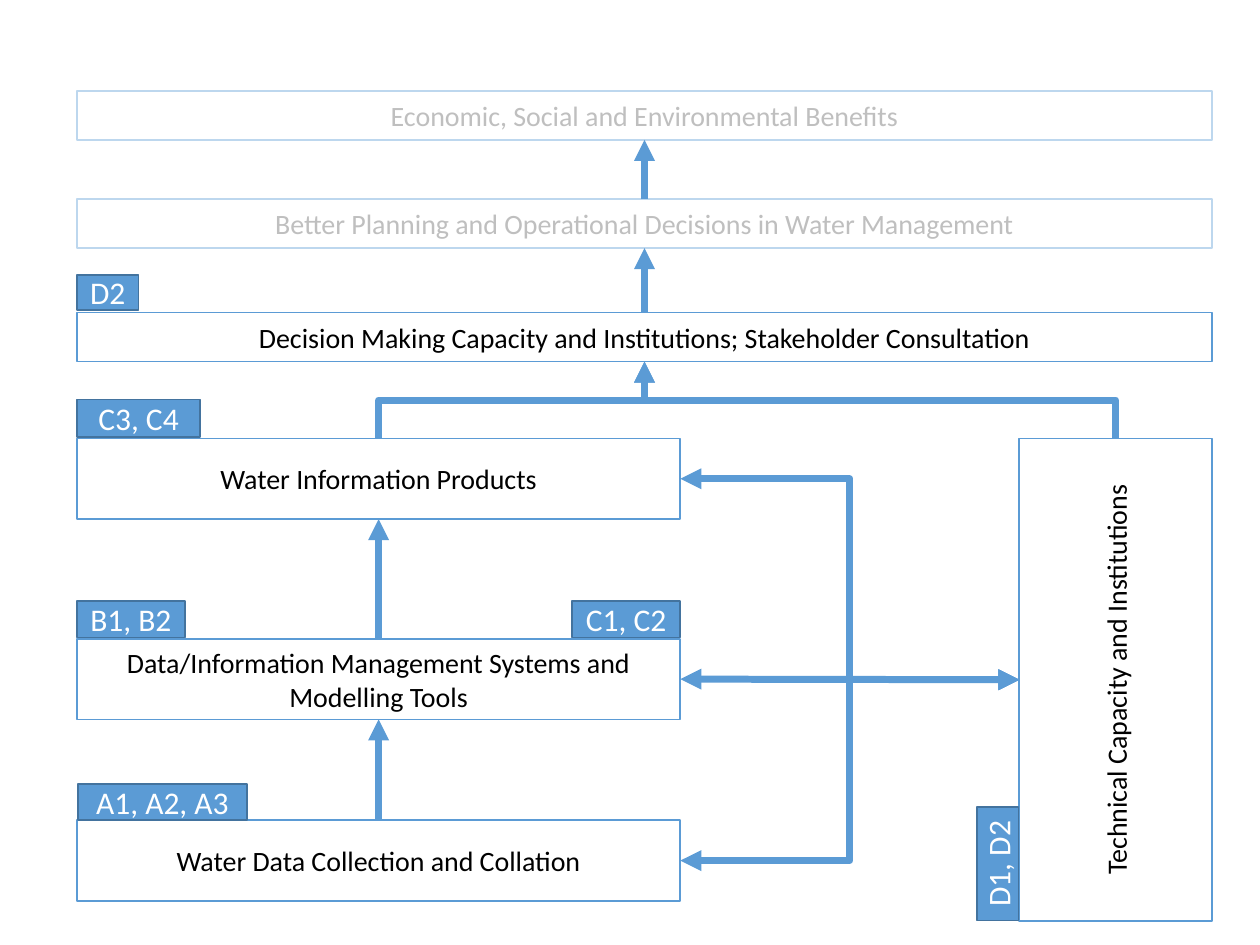
"""Build the water information value chain diagram slide."""
from lxml.etree import SubElement
from pptx import Presentation
from pptx.dml.color import RGBColor
from pptx.enum.shapes import MSO_CONNECTOR as Link, MSO_SHAPE as Shape
from pptx.enum.text import MSO_ANCHOR, PP_ALIGN
from pptx.oxml.ns import qn
from pptx.util import Inches, Pt

BLUE, PALE, EDGE = "5B9BD5", "BDD7EE", "43739E"
WHITE, BLACK, GREY = "FFFFFF", "000000", "BFBFBF"
LEFT, WIDE, NARROW = 0.61, 9.01, 4.79
BAR, BLOCK = 0.39, 0.64

STAGES = {
    "benefits": ("Economic, Social and Environmental Benefits",
                 (LEFT, 0.72, WIDE, BAR), PALE, GREY),
    "planning": ("Better Planning and Operational Decisions in Water Management",
                 (LEFT, 1.58, WIDE, BAR), PALE, GREY),
    "decisions": ("Decision Making Capacity and Institutions; Stakeholder Consultation",
                  (LEFT, 2.48, WIDE, BAR), BLUE, BLACK),
    "products": ("Water Information Products",
                 (LEFT, 3.48, NARROW, BLOCK), BLUE, BLACK),
    "systems": ("Data/Information Management Systems and Modelling Tools",
                (LEFT, 5.07, NARROW, BLOCK), BLUE, BLACK),
    "collection": ("Water Data Collection and Collation",
                   (LEFT, 6.51, NARROW, BLOCK), BLUE, BLACK),
    "capacity": ("Technical Capacity and Institutions",
                 (8.09, 3.48, 1.53, 3.83), BLUE, BLACK),
}
UPWARD = [("collection", "systems"), ("systems", "products"),
          ("products", "decisions"), ("decisions", "planning"),
          ("planning", "benefits"), ("capacity", "decisions")]
SUPPORTED = ["collection", "systems", "products"]
TAGS = [
    ("A1, A2, A3", (0.62, 6.22, 1.34, 0.29), 0),
    ("B1, B2", (LEFT, 4.77, 0.86, 0.29), 0),
    ("D1, D2", (7.47, 6.69, 0.9, 0.33), 270),
    ("C3, C4", (LEFT, 3.17, 0.98, 0.3), 0),
    ("C1, C2", (4.54, 4.77, 0.86, 0.29), 0),
    ("D2", (LEFT, 2.18, 0.49, 0.28), 0),
]


def rgb(value):
    """Turn a hex string into a colour."""
    return RGBColor.from_string(value)


def add_box(slide, text, place, fill, line, ink, size):
    """Draw a rectangle with centred text."""
    box = slide.shapes.add_shape(Shape.RECTANGLE, *map(Inches, place))
    box.shadow.inherit = False
    box.fill.solid()
    box.fill.fore_color.rgb = rgb(fill)
    box.line.color.rgb = rgb(line)
    box.line.width = Pt(1)
    frame = box.text_frame
    frame.word_wrap = True
    frame.vertical_anchor = MSO_ANCHOR.MIDDLE
    label = frame.paragraphs[0]
    label.text = text
    label.alignment = PP_ALIGN.CENTER
    label.font.name, label.font.size = "Calibri", Pt(size)
    label.font.color.rgb = rgb(ink)
    return box


def add_arrow(slide, kind, start, end, heads=("tailEnd",)):
    """Draw a thick connector with triangular heads."""
    arrow = slide.shapes.add_connector(kind, *map(Inches, start + end))
    arrow.line.color.rgb = rgb(BLUE)
    arrow.line.width = Pt(4)
    props = arrow._element.spPr
    for head in heads:
        SubElement(props.find(qn("a:ln")), qn("a:" + head), type="triangle")
    SubElement(props, qn("a:effectLst"))
    return arrow


def add_upward(slide, source, target):
    """Link the top of one stage to the bottom of another."""
    left, y1, width, _ = STAGES[source][1]
    x1 = left + width / 2
    left, top, width, height = STAGES[target][1]
    x2, y2 = left + width / 2, top + height
    if abs(x1 - x2) < 0.01:
        add_arrow(slide, Link.STRAIGHT, (x1, y1), (x2, y2))
        return
    mid_x, mid_y = (x1 + x2) / 2, (y1 + y2) / 2
    rise, run = (y1 - y2) / 2, (x2 - x1) / 2
    arrow = add_arrow(slide, Link.ELBOW, (mid_x - rise, mid_y - run),
                      (mid_x + rise, mid_y + run))
    arrow._element.spPr.find(qn("a:xfrm")).set("rot", str(270 * 60000))


def add_support(slide, target):
    """Link the capacity column both ways with a stage."""
    x1, top, _, height = STAGES["capacity"][1]
    y1 = top + height / 2
    left, top, width, height = STAGES[target][1]
    x2, y2 = left + width, top + height / 2
    kind = Link.STRAIGHT if abs(y1 - y2) < 0.02 else Link.ELBOW
    add_arrow(slide, kind, (x1, y1), (x2, y2), ("headEnd", "tailEnd"))


def main():
    """Assemble and save the slide."""
    deck = Presentation()
    deck.slide_width, deck.slide_height = Inches(10), Inches(7.5)
    slide = deck.slides.add_slide(deck.slide_layouts[6])
    for name, (text, place, line, ink) in STAGES.items():
        stage = add_box(slide, text, place, WHITE, line, ink, 16)
        if name == "capacity":
            stage.text_frame._txBody.bodyPr.set("vert", "vert270")
    for source, target in UPWARD:
        add_upward(slide, source, target)
    for target in SUPPORTED:
        add_support(slide, target)
    for text, place, angle in TAGS:
        add_box(slide, text, place, BLUE, EDGE, WHITE, 18).rotation = angle
    deck.save("out.pptx")


if __name__ == "__main__":
    main()
